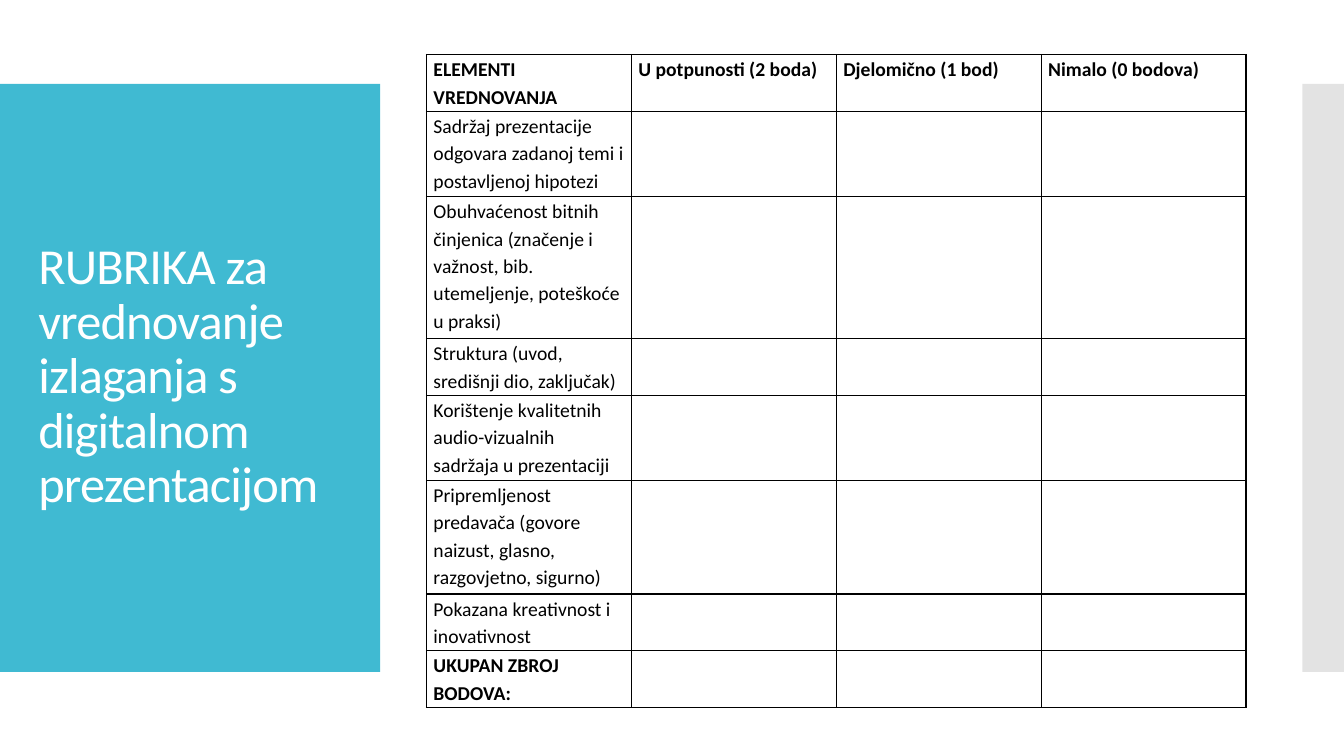
from dataclasses import dataclass
from typing import Optional

from lxml.etree import SubElement
from pptx import Presentation
from pptx.dml.color import RGBColor
from pptx.enum.shapes import MSO_SHAPE
from pptx.enum.text import MSO_ANCHOR, MSO_AUTO_SIZE, PP_ALIGN
from pptx.oxml.ns import qn
from pptx.util import Inches, Pt


@dataclass(frozen=True)
class Theme:
    font: str = "Calibri"
    accent: str = "40BAD2"
    side: str = "C8C8C8"
    ink: str = "000000"
    paper: str = "FFFFFF"
    title_size: float = 36
    title_tracking: int = -60
    body_size: float = 14
    border: float = 1


@dataclass(frozen=True)
class Area:
    left: float
    top: float
    width: float
    height: float

    def box(self) -> tuple[int, int, int, int]:
        return (
            round(SLIDE_WIDTH * self.left / 100),
            round(SLIDE_HEIGHT * self.top / 100),
            round(SLIDE_WIDTH * self.width / 100),
            round(SLIDE_HEIGHT * self.height / 100),
        )


@dataclass(frozen=True)
class Panel:
    area: Area
    color: str
    opacity: Optional[int] = None


@dataclass(frozen=True)
class Criterion:
    labels: tuple[str, ...]
    lines: int
    bold: bool = False


THEME = Theme()
SLIDE_WIDTH, SLIDE_HEIGHT = Inches(13.33), Inches(7.5)
TITLE = "RUBRIKA za vrednovanje izlaganja s digitalnom prezentacijom"
TITLE_AREA = Area(2.1, 16.4, 24.16, 67.07)
RUBRIC_AREA = Area(31.73, 7.2, 60.99, 86.4)
PANELS = (
    Panel(Area(0, 11.11, 28.28, 77.78), THEME.accent),
    Panel(Area(96.9, 11.11, 3.1, 77.78), THEME.side, 50),
)
CRITERIA = (
    Criterion(("ELEMENTI VREDNOVANJA", "U potpunosti (2 boda)",
               "Djelomično (1 bod)", "Nimalo (0 bodova)"), 2, True),
    Criterion(("Sadržaj prezentacije odgovara zadanoj temi i postavljenoj hipotezi",), 3),
    Criterion(("Obuhvaćenost bitnih činjenica (značenje i važnost, bib. "
               "utemeljenje, poteškoće u praksi)",), 5),
    Criterion(("Struktura (uvod, središnji dio, zaključak)",), 2),
    Criterion(("Korištenje kvalitetnih audio-vizualnih sadržaja u prezentaciji",), 3),
    Criterion(("Pripremljenost predavača (govore naizust, glasno, "
               "razgovjetno, sigurno)",), 4),
    Criterion(("Pokazana kreativnost i inovativnost",), 2),
    Criterion(("UKUPAN ZBROJ BODOVA:",), 2, True),
)


def add_run(paragraph, text: str, size: float, color: str, bold: bool = False):
    run = paragraph.add_run()
    run.text = text
    run.font.name = THEME.font
    run.font.size = Pt(size)
    run.font.bold = bold
    run.font.color.rgb = RGBColor.from_string(color)
    return run


def draw_panel(slide, panel: Panel) -> None:
    block = slide.shapes.add_shape(MSO_SHAPE.RECTANGLE, *panel.area.box())
    block.shadow.inherit = False
    block.fill.solid()
    block.fill.fore_color.rgb = RGBColor.from_string(panel.color)
    block.line.fill.background()
    if panel.opacity is not None:
        tint = block.element.spPr.find(qn("a:solidFill"))[0]
        SubElement(tint, qn("a:alpha"), val=str(panel.opacity * 1000))
    slide.shapes.title.element.addprevious(block.element)


def draw_title(slide) -> None:
    title = slide.shapes.title
    title.left, title.top, title.width, title.height = TITLE_AREA.box()
    frame = title.text_frame
    frame.word_wrap = True
    frame.auto_size = MSO_AUTO_SIZE.NONE
    frame.vertical_anchor = MSO_ANCHOR.MIDDLE
    heading = frame.paragraphs[0]
    heading.alignment = PP_ALIGN.LEFT
    heading.line_spacing = 0.9
    run = add_run(heading, TITLE, THEME.title_size, THEME.paper)
    run.font._element.set("spc", str(THEME.title_tracking))


def format_cell(cell) -> None:
    cell.margin_left = cell.margin_right = Inches(0.07)
    cell.margin_top = cell.margin_bottom = 0
    cell.fill.background()
    properties = cell._tc.get_or_add_tcPr()
    for position, side in enumerate(("a:lnL", "a:lnR", "a:lnT", "a:lnB")):
        border = SubElement(properties, qn(side), w=str(Pt(THEME.border)))
        SubElement(SubElement(border, qn("a:solidFill")), qn("a:srgbClr"), val=THEME.ink)
        properties.insert(position, border)


def draw_rubric(slide) -> None:
    columns = len(CRITERIA[0].labels)
    left, top, width, height = RUBRIC_AREA.box()
    rubric = slide.shapes.add_table(len(CRITERIA), columns, left, top, width, height).table
    rubric.first_row = rubric.horz_banding = False
    for column in rubric.columns:
        column.width = width // columns
    line_height = height // sum(criterion.lines for criterion in CRITERIA)
    for row, criterion in zip(rubric.rows, CRITERIA):
        row.height = criterion.lines * line_height
        for cell in row.cells:
            format_cell(cell)
        for cell, label in zip(row.cells, criterion.labels):
            paragraph = cell.text_frame.paragraphs[0]
            paragraph.line_spacing = 1.15
            add_run(paragraph, label, THEME.body_size, THEME.ink, criterion.bold)


def main() -> None:
    deck = Presentation()
    deck.slide_width, deck.slide_height = SLIDE_WIDTH, SLIDE_HEIGHT
    slide = deck.slides.add_slide(deck.slide_layouts[5])
    for panel in PANELS:
        draw_panel(slide, panel)
    draw_title(slide)
    draw_rubric(slide)
    deck.save("out.pptx")


if __name__ == "__main__":
    main()
